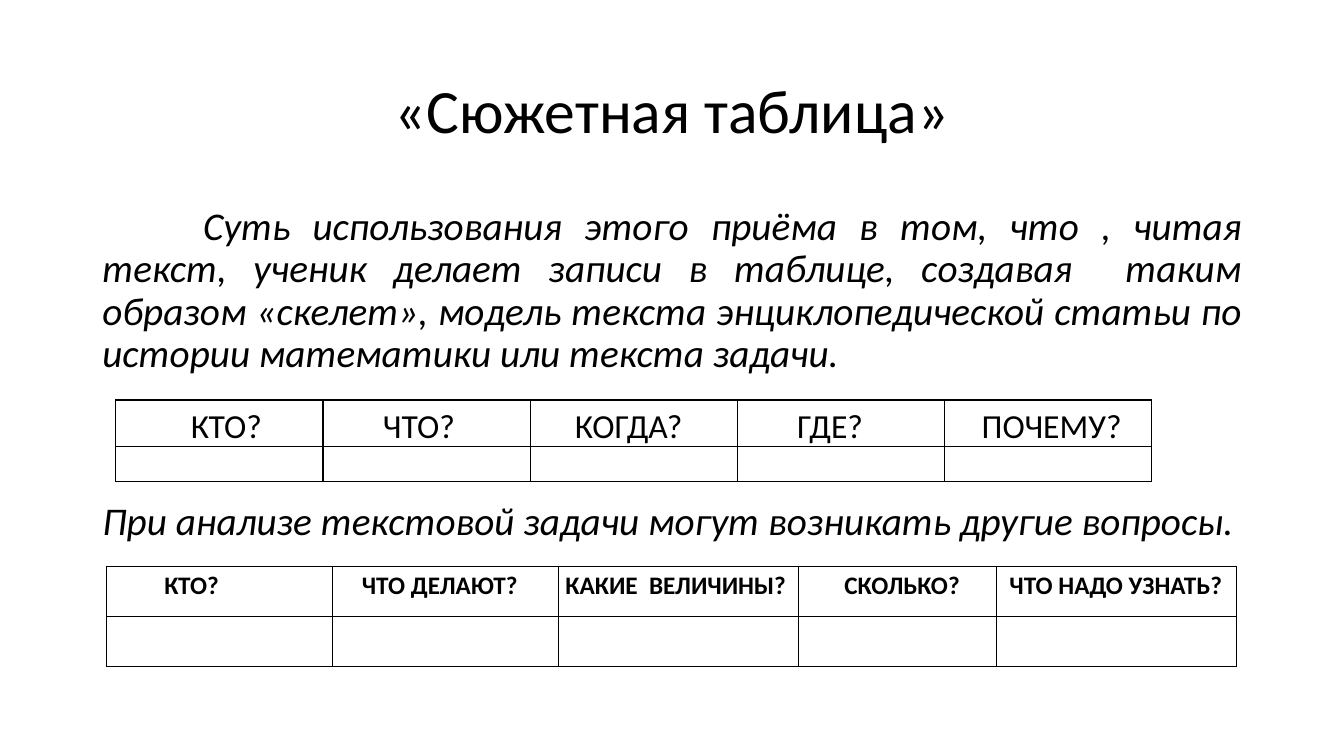
from lxml.etree import SubElement
from pptx import Presentation
from pptx.dml.color import RGBColor
from pptx.enum.text import MSO_ANCHOR, PP_ALIGN
from pptx.oxml.ns import qn
from pptx.util import Cm, Pt

BLACK = RGBColor(0x00, 0x00, 0x00)
FONT = "Calibri"
LEFT, WIDTH = 2.33, 29.21
CELL_INSET = 0.18

INTRO = (
    "Суть использования этого приёма в том, что , читая текст, ученик делает "
    "записи в таблице, создавая  таким образом «скелет», модель текста "
    "энциклопедической статьи по истории математики или текста задачи."
)
ANALYSIS = "При анализе текстовой задачи могут возникать другие вопросы."

# Header text and its left indent in cm
STORY_HEADERS = [
    ("КТО?", 1.71), ("ЧТО?", 1.33), ("КОГДА?", 0.95), ("ГДЕ?", 1.33), ("ПОЧЕМУ?", 0.76),
]
TASK_HEADERS = [
    ("КТО?", 1.27), ("ЧТО ДЕЛАЮТ?", 0.56), ("КАКИЕ  ВЕЛИЧИНЫ?", 0),
    ("СКОЛЬКО?", 0.98), ("ЧТО НАДО УЗНАТЬ?", 0.14),
]


class SlideBuilder:
    def __init__(self, prs):
        self.s = prs.slides.add_slide(prs.slide_layouts[5])

    def add_text(self, tf, text, align=PP_ALIGN.LEFT, spacing=0.9, **font):
        p = tf.paragraphs[0]
        p.alignment, p.line_spacing = align, spacing
        r = p.add_run()
        r.text = text
        r.font.color.rgb = BLACK
        for name, value in {"name": FONT, "bold": False, **font}.items():
            setattr(r.font, name, value)
        return p

    def title(self, text, top, height):
        sp = self.s.shapes.title
        box = {"left": LEFT, "top": top, "width": WIDTH, "height": height}
        for name, value in box.items():
            setattr(sp, name, Cm(value))
        sp.text_frame.vertical_anchor = MSO_ANCHOR.MIDDLE
        self.add_text(sp.text_frame, text, PP_ALIGN.CENTER, size=Pt(44))

    def body(self, text, top, height, align=PP_ALIGN.LEFT, indent=0):
        sp = self.s.shapes.add_textbox(Cm(LEFT), Cm(top), Cm(WIDTH), Cm(height))
        sp.text_frame.word_wrap = True
        p = self.add_text(sp.text_frame, text, align, size=Pt(28), italic=True)
        p._p.get_or_add_pPr().set("indent", str(Cm(indent)))

    def borders(self, cell):
        tc_pr = cell._tc.get_or_add_tcPr()
        for side in ("lnL", "lnR", "lnT", "lnB"):
            ln = SubElement(tc_pr, qn(f"a:{side}"), w=str(Pt(1)))
            fill = SubElement(ln, qn("a:solidFill"))
            SubElement(fill, qn("a:srgbClr"), val=str(BLACK))

    def table(self, headers, left, top, col_widths, row_heights, **font):
        """Add a table with a header row above empty rows."""
        table = self.s.shapes.add_table(
            len(row_heights), len(headers), Cm(left), Cm(top),
            Cm(sum(col_widths)), Cm(sum(row_heights)),
        ).table
        for column, width in zip(table.columns, col_widths):
            column.width = Cm(width)
        for row, height in zip(table.rows, row_heights):
            row.height = Cm(height)
        margins = {"margin_left": CELL_INSET, "margin_right": CELL_INSET,
                   "margin_top": 0, "margin_bottom": 0}
        for cell in table.iter_cells():
            for name, value in margins.items():
                setattr(cell, name, Cm(value))
            self.borders(cell)
            cell.fill.background()
        for cell, (text, indent) in zip(table.rows[0].cells, headers):
            cell.margin_left = Cm(CELL_INSET + indent)
            self.add_text(cell.text_frame, text, spacing=1.15, **font)


def main():
    prs = Presentation()
    prs.slide_width, prs.slide_height = Cm(33.87), Cm(19.05)
    slide = SlideBuilder(prs)
    slide.title("«Сюжетная таблица»", 1.02, 3.68)
    slide.body(INTRO, 5.08, 4.6, PP_ALIGN.JUSTIFY, indent=2.54)
    slide.table(STORY_HEADERS, 2.92, 10.08, [5.22] * 5, [1.17, 0.89], size=Pt(24))
    slide.body(ANALYSIS, 12.52, 1.4)
    slide.table(TASK_HEADERS, 2.69, 14.27, [5.69, 5.69, 6.05, 5, 6.05], [1.26] * 2,
                size=Pt(18), bold=True)
    prs.save("out.pptx")


if __name__ == "__main__":
    main()
